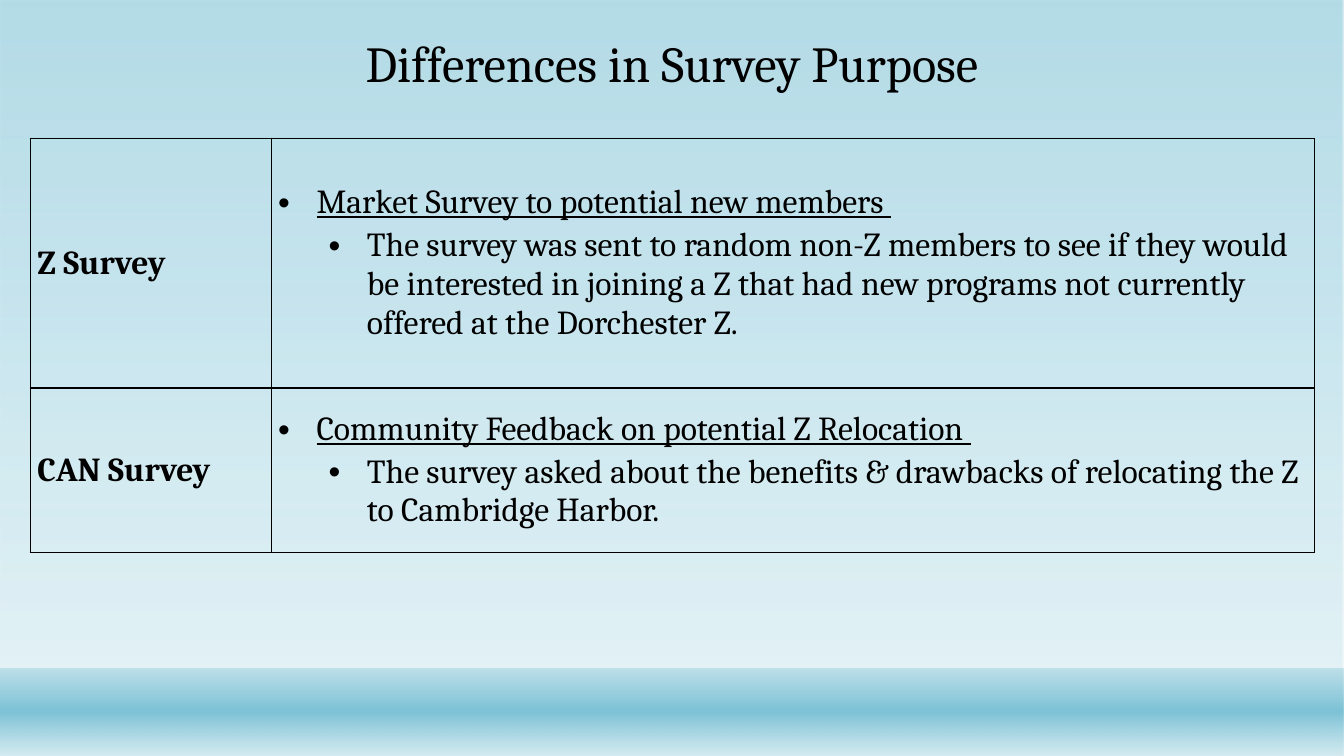
from lxml import etree
from pptx import Presentation
from pptx.dml.color import RGBColor
from pptx.enum.shapes import MSO_SHAPE
from pptx.enum.text import MSO_ANCHOR, MSO_AUTO_SIZE, PP_ALIGN
from pptx.oxml.ns import qn
from pptx.util import Inches, Pt

# Content
TITLE = "Differences in Survey Purpose"
SURVEYS = [
    ("Z Survey", "Market Survey to potential new members ",
     "The survey was sent to random non-Z members to see if they would "
     "be interested in joining a Z that had new programs not currently "
     "offered at the Dorchester Z."),
    ("CAN Survey", "Community Feedback on potential Z Relocation ",
     "The survey asked about the benefits & drawbacks of relocating the Z "
     "to Cambridge Harbor."),
]

# Style
FONT = "Cambria"
BLACK = RGBColor(0x00, 0x00, 0x00)
TEAL = RGBColor(0x7D, 0xC2, 0xD6)
PALE = RGBColor(0xD4, 0xEB, 0xF1)
RECTANGLE = MSO_SHAPE.RECTANGLE
MIDDLE, BOTTOM = MSO_ANCHOR.MIDDLE, MSO_ANCHOR.BOTTOM
CENTER = PP_ALIGN.CENTER
NO_FIT = MSO_AUTO_SIZE.NONE

# Layout, in inches
WIDTH, HEIGHT = 13.33, 7.5
BAND_TOP = 6.63
TABLE_LEFT, TABLE_TOP = 0.3, 1.37
COLUMNS, ROWS = (2.39, 10.35), (2.48, 1.63)
HANGING = 0.38
LEVEL_STEP = 0.5

# Backdrop gradients: (position %, colour, opacity %)
BACKDROP = [
    (0, HEIGHT, [(0, TEAL, 58), (88, PALE, 65)]),
    (BAND_TOP, HEIGHT - BAND_TOP,
     [(1, TEAL, 38), (49, TEAL, 100), (100, PALE, 89)]),
]


def add_child(parent, tag, **attributes):
    return etree.SubElement(parent, qn(tag), attributes)


def add_gradient(sp, stops):
    sp.fill.background()
    no_fill = sp._element.spPr.find(qn("a:noFill"))
    grad = etree.Element(qn("a:gradFill"), rotWithShape="1")
    stop_list = add_child(grad, "a:gsLst")
    for position, color, opacity in stops:
        stop = add_child(stop_list, "a:gs", pos=str(position * 1000))
        clr = add_child(stop, "a:srgbClr", val=str(color))
        add_child(clr, "a:alpha", val=str(opacity * 1000))
    add_child(grad, "a:lin", ang="5400000", scaled="0")
    no_fill.getparent().replace(no_fill, grad)


def add_text(p, text, size, bold=False, underline=False):
    r = p.add_run()
    r.text = text
    font = r.font
    font.name, font.size = FONT, Pt(size)
    font.bold, font.underline = bold, underline
    font.color.rgb = BLACK


def add_bullet(p, level):
    p.level = level
    pPr = p._p.get_or_add_pPr()
    pPr.set("marL", str(Inches(HANGING + level * LEVEL_STEP)))
    pPr.set("indent", str(-Inches(HANGING)))
    add_child(pPr, "a:buFont", typeface="Arial")
    add_child(pPr, "a:buChar", char="•")
    p.space_after = Pt(3)


def format_cell(cell):
    cell.vertical_anchor = MIDDLE
    cell.margin_left = cell.margin_right = Inches(0.07)
    cell.margin_top = cell.margin_bottom = 0
    tcPr = cell._tc.get_or_add_tcPr()
    for side in ("a:lnL", "a:lnR", "a:lnT", "a:lnB"):
        line = add_child(tcPr, side, w=str(Pt(1)))
        fill = add_child(line, "a:solidFill")
        add_child(fill, "a:srgbClr", val=str(BLACK))
    cell.fill.background()


prs = Presentation()
prs.slide_width, prs.slide_height = Inches(WIDTH), Inches(HEIGHT)
slide = prs.slides.add_slide(prs.slide_layouts[5])
shapes = slide.shapes

# Backdrop, placed behind the title
for depth, (top, height, stops) in enumerate(BACKDROP):
    sp = shapes.add_shape(RECTANGLE, 0, Inches(top), Inches(WIDTH), Inches(height))
    sp.shadow.inherit = False
    sp.line.fill.background()
    add_gradient(sp, stops)
    shapes._spTree.insert(2 + depth, sp._element)

# Title
title = shapes.title
title.left, title.top = Inches(0.87), Inches(0.31)
title.width, title.height = Inches(11.59), Inches(0.67)
tf = title.text_frame
tf.auto_size = NO_FIT
tf.vertical_anchor = BOTTOM
p = tf.paragraphs[0]
p.alignment = CENTER
p.line_spacing = 0.9
add_text(p, TITLE, 36)

# Table
table = shapes.add_table(
    len(ROWS), len(COLUMNS), Inches(TABLE_LEFT), Inches(TABLE_TOP),
    Inches(sum(COLUMNS)), Inches(sum(ROWS))).table
table.first_row = table.horz_banding = False
for column, width in zip(table.columns, COLUMNS):
    column.width = Inches(width)
for row, height, (name, purpose, detail) in zip(table.rows, ROWS, SURVEYS):
    row.height = Inches(height)
    name_cell, purpose_cell = row.cells
    format_cell(name_cell)
    format_cell(purpose_cell)
    add_text(name_cell.text_frame.paragraphs[0], name, 24, bold=True)
    tf = purpose_cell.text_frame
    for level, text in enumerate((purpose, detail)):
        p = tf.add_paragraph() if level else tf.paragraphs[0]
        add_bullet(p, level)
        add_text(p, text, 24, underline=level == 0)

prs.save("out.pptx")
